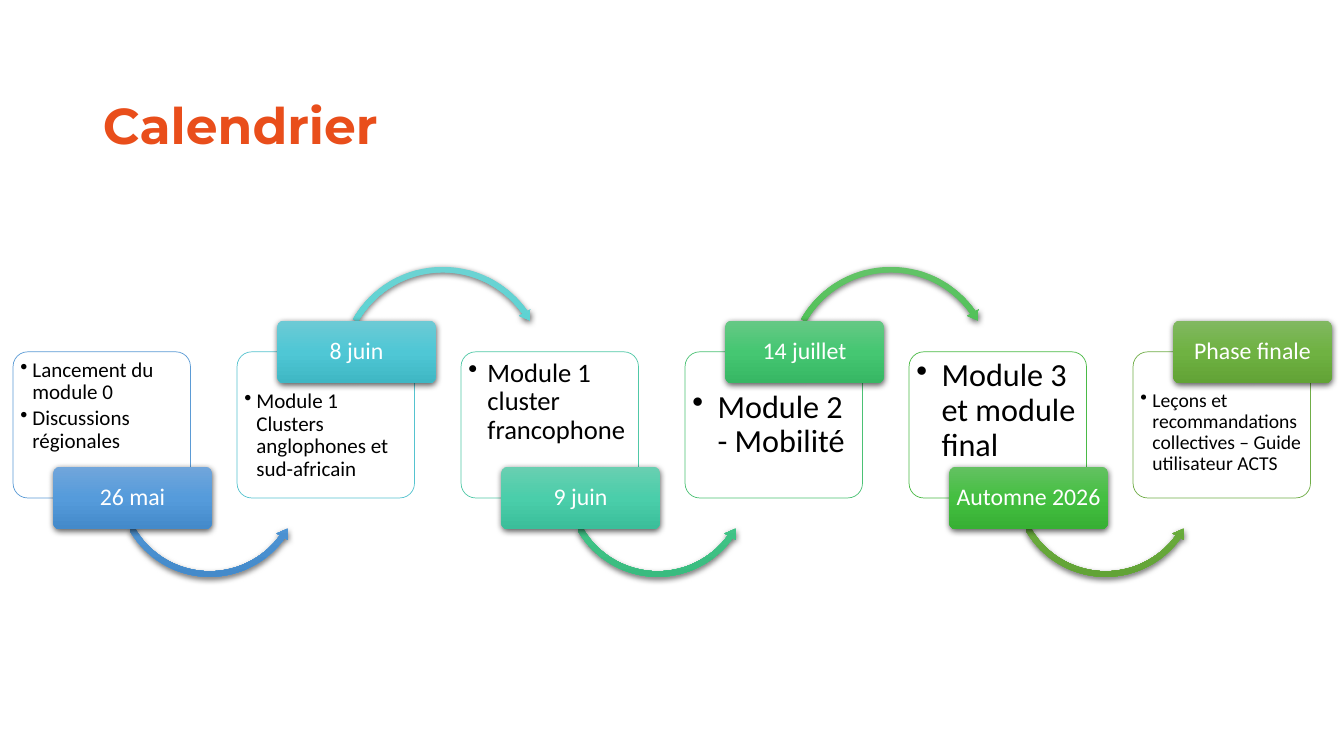
from copy import deepcopy
from dataclasses import dataclass

from lxml.etree import SubElement
from pptx import Presentation
from pptx.dml.color import RGBColor
from pptx.enum.shapes import MSO_SHAPE
from pptx.enum.text import MSO_ANCHOR, MSO_AUTO_SIZE, PP_ALIGN
from pptx.oxml.ns import qn
from pptx.util import Inches, Pt


@dataclass(frozen=True)
class Theme:
    title_font: str = "Montserrat"
    body_font: str = "Calibri"
    title_size: int = 36
    label_size: int = 17
    title_colors: tuple = ("E94E1B", "F9B233")
    text: str = "000000"
    paper: str = "FFFFFF"


@dataclass(frozen=True)
class Step:
    label: str
    items: tuple
    size: int
    indent: float
    line: str
    label_colors: tuple
    arrow_colors: tuple = ()


THEME = Theme()
SLIDE_W, SLIDE_H = 13.33, 7.5
BLUE = ("71A6DB", "559BDB", "448ACA")
OLIVE = ("81B861", "6FB242", "62A336")

STEPS = [
    Step("26 mai", ("Lancement du module 0", "Discussions régionales"), 15, 0.12,
         "5B9BD5", BLUE, BLUE),
    Step("8 juin", ("Module 1 Clusters anglophones et sud-africain",), 15, 0.12,
         "55C3CF", ("6DCAD5", "4FC7D5", "3FB7C4"), ("6CD3D3", "4ED2D3", "3EC2C3")),
    Step("9 juin", ("Module 1 cluster francophone",), 19, 0.19,
         "50C8A7", ("69CFB1", "4ACEAA", "3BBE9A"), ("67CC9A", "47CB8E", "39BB7F")),
    Step("14 juillet", ("Module 2 - Mobilité",), 23, 0.25,
         "4BC174", ("66C885", "45C772", "37B764"), ("63C368", "42C14A", "34B23D")),
    Step("Automne 2026", ("Module 3 et module final",), 23, 0.25,
         "4ABA46", ("64C162", "44BF41", "37B034"), OLIVE),
    Step("Phase finale", ("Leçons et recommandations collectives – Guide utilisateur ACTS",),
         14, 0.12, "70AD47", OLIVE),
]

# Sizes within one column of the timeline
CARD_W, CARD_H = 1.76, 1.45
LABEL_W, LABEL_H, LABEL_DX = 1.57, 0.62, 0.4

# Arrow: shape, offset from the card, side, adjustments
LOWER_ARROW = (MSO_SHAPE.LEFT_CIRCULAR_ARROW, 1.0, 0.37, 1.9,
               (0.029, 3.586, 21.341, 90.245, 0.034))
UPPER_ARROW = (MSO_SHAPE.CIRCULAR_ARROW, 0.98, -0.88, 2.12,
               (0.026, 3.183, 195.062, 125.755, 0.031))


def rgb(value):
    return RGBColor.from_string(value)


def paint_gradient(fill, holder, colors, angle):
    """Spread the colours evenly; holder is the XML element that carries the fill."""
    fill.gradient()
    fill.gradient_angle = 360 - angle
    gs_list = holder.find(qn("a:gradFill")).find(qn("a:gsLst"))
    for _ in colors[2:]:
        gs_list.append(deepcopy(gs_list[-1]))
    for i, (stop, color) in enumerate(zip(fill.gradient_stops, colors)):
        stop.position = i / (len(colors) - 1)
        stop.color.rgb = rgb(color)


def add_plain_shape(slide, kind, left, top, width, height, adjustments):
    sp = slide.shapes.add_shape(kind, Inches(left), Inches(top), Inches(width), Inches(height))
    for i, value in enumerate(adjustments):
        sp.adjustments[i] = value
    sp.shadow.inherit = False
    return sp


def add_glossy_shape(slide, kind, left, top, width, height, adjustments, colors):
    sp = add_plain_shape(slide, kind, left, top, width, height, adjustments)
    sp_pr = sp._element.spPr
    paint_gradient(sp.fill, sp_pr, colors, 90)
    sp.line.fill.background()
    shadow = SubElement(sp_pr.find(qn("a:effectLst")), qn("a:outerShdw"),
                        blurRad=str(Pt(4.5)), dist=str(Pt(1.5)), dir="5400000",
                        algn="ctr", rotWithShape="0")
    color = SubElement(shadow, qn("a:srgbClr"), val=THEME.text)
    SubElement(color, qn("a:alpha"), val="63000")
    return sp


def set_frame(tf, anchor, side, top, bottom):
    tf.word_wrap = True
    tf.vertical_anchor = anchor
    tf.margin_left = tf.margin_right = Inches(side)
    tf.margin_top, tf.margin_bottom = Inches(top), Inches(bottom)


def add_text(p, text, size, color):
    p.line_spacing = 0.9
    r = p.add_run()
    r.text = text
    r.font.name = THEME.body_font
    r.font.size = Pt(size)
    r.font.color.rgb = rgb(color)


def add_title(slide, text, left, top, width, height):
    sp = slide.shapes.title
    sp.left, sp.top, sp.width, sp.height = map(Inches, (left, top, width, height))
    tf = sp.text_frame
    tf.auto_size = MSO_AUTO_SIZE.NONE
    tf.vertical_anchor = MSO_ANCHOR.MIDDLE
    p = tf.paragraphs[0]
    p.alignment = PP_ALIGN.LEFT
    p.line_spacing = 0.9
    r = p.add_run()
    r.text = text
    r.font.name = THEME.title_font
    r.font.size = Pt(THEME.title_size)
    r.font.bold = True
    paint_gradient(r.font.fill, r.font._element, THEME.title_colors, 20)


def add_card(slide, step, left, top, label_above):
    sp = add_plain_shape(slide, MSO_SHAPE.ROUNDED_RECTANGLE, left, top, CARD_W, CARD_H, (0.1,))
    sp.fill.solid()
    sp.fill.fore_color.rgb = rgb(THEME.paper)
    color = sp._element.spPr.find(qn("a:solidFill"))[0]
    SubElement(color, qn("a:alpha"), val="90000")
    sp.line.color.rgb = rgb(step.line)
    sp.line.width = Pt(0.5)

    # Bulleted text keeps clear of the half label that overlaps the card
    tf = sp.text_frame
    clear = 0.03 + LABEL_H / 2
    set_frame(tf, MSO_ANCHOR.TOP, 0.03, *((clear, 0.03) if label_above else (0.03, clear)))
    for i, item in enumerate(step.items):
        p = tf.add_paragraph() if i else tf.paragraphs[0]
        p_pr = p._p.get_or_add_pPr()
        p_pr.set("marL", str(Inches(step.indent)))
        p_pr.set("indent", str(-Inches(step.indent)))
        SubElement(p_pr, qn("a:buChar"), char="•")
        p.level = 1
        p.alignment = PP_ALIGN.LEFT
        p.space_after = Pt(round(0.15 * step.size))
        add_text(p, item, step.size, THEME.text)


def add_label(slide, step, left, top):
    sp = add_glossy_shape(slide, MSO_SHAPE.ROUNDED_RECTANGLE, left, top, LABEL_W, LABEL_H,
                          (0.1,), step.label_colors)
    tf = sp.text_frame
    set_frame(tf, MSO_ANCHOR.MIDDLE, 0.04, 0.02, 0.02)
    p = tf.paragraphs[0]
    p.alignment = PP_ALIGN.CENTER
    add_text(p, step.label, THEME.label_size, THEME.paper)


def add_timeline(slide, steps, left, top, width):
    pitch = width / len(steps)
    for i, step in enumerate(steps):
        x = left + i * pitch
        label_above = i % 2 == 1
        add_card(slide, step, x, top, label_above)
        if step.arrow_colors:
            kind, dx, dy, side, adjustments = UPPER_ARROW if label_above else LOWER_ARROW
            add_glossy_shape(slide, kind, x + dx, top + dy, side, side,
                             adjustments, step.arrow_colors)
        edge = top if label_above else top + CARD_H
        add_label(slide, step, x + LABEL_DX, edge - LABEL_H / 2)


def main():
    prs = Presentation()
    prs.slide_width, prs.slide_height = Inches(SLIDE_W), Inches(SLIDE_H)
    slide = prs.slides.add_slide(prs.slide_layouts[5])
    add_title(slide, "Calendrier", 0.92, 0.55, 11.5, 1.45)
    add_timeline(slide, STEPS, 0.13, 3.49, SLIDE_W)
    prs.save("out.pptx")


if __name__ == "__main__":
    main()
